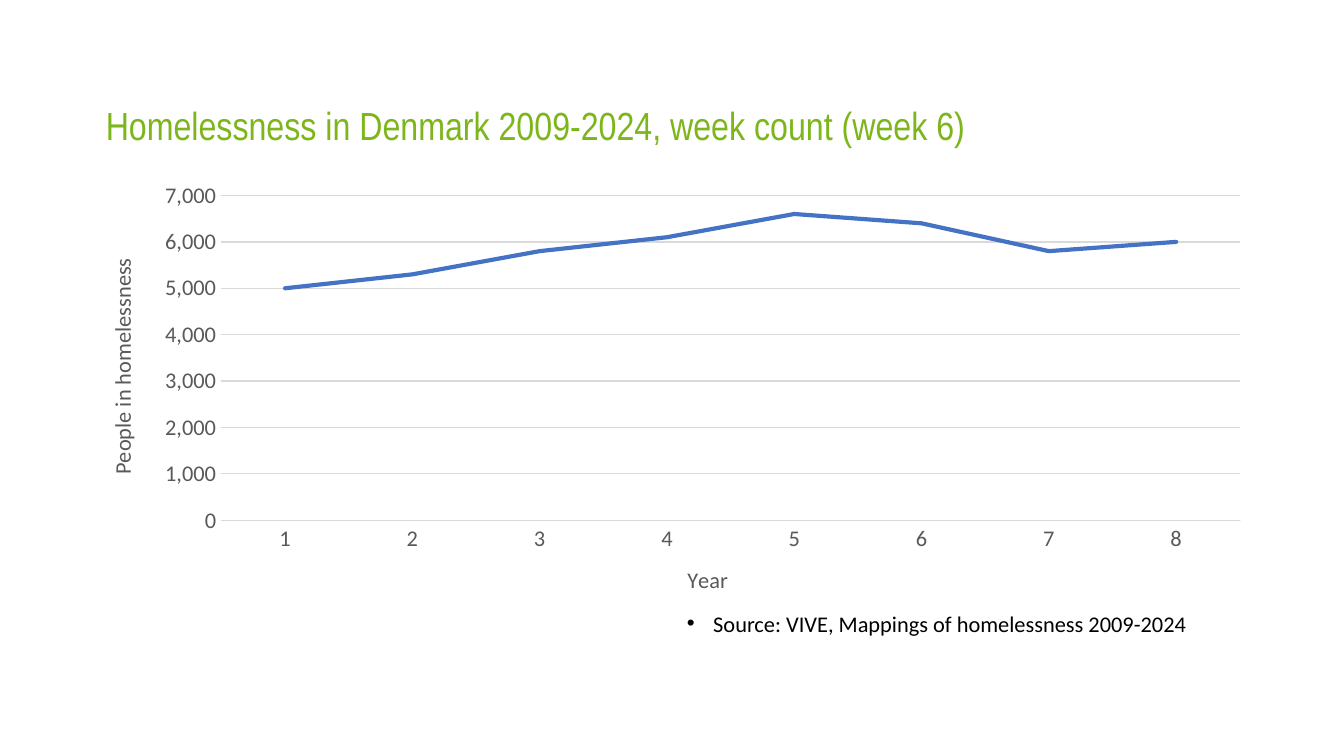
"""Build a slide with a line chart of homelessness in Denmark."""
from dataclasses import dataclass

from lxml import etree
from pptx import Presentation
from pptx.chart import data as cd
from pptx.dml.color import RGBColor
from pptx.enum import chart as ch
from pptx.oxml import ns
from pptx.util import Cm, Pt


@dataclass(frozen=True)
class Theme:
    """Hold the colours, fonts and type sizes of the slide."""
    green: str = "7DB61B"
    black: str = "000000"
    grey: str = "595959"
    grid: str = "D9D9D9"
    blue: str = "4472C4"
    heading: str = "Arial Narrow"
    body: str = "Calibri"
    title_size: float = 21
    body_size: float = 12


THEME = Theme()
COUNTS = (5000, 5300, 5800, 6100, 6600, 6400, 5800, 6000)


def style_font(font, size, color, name=THEME.body):
    """Set size, colour and typeface of a font."""
    font.size, font.name, font.bold = Pt(size), name, False
    font.color.rgb = RGBColor.from_string(color)


def style_line(line, color, width):
    """Set colour and width of a line with round ends."""
    line.color.rgb = RGBColor.from_string(color)
    line.width = Pt(width)
    line._get_or_add_ln().set("cap", "rnd")


def add_text(s, box, words, size, color, name=THEME.body):
    """Add a wrapped text box and return its paragraph."""
    tf = s.shapes.add_textbox(*map(Cm, box)).text_frame
    tf.word_wrap = True
    tf.text = words
    p = tf.paragraphs[0]
    style_font(p.runs[0].font, size, color, name)
    return p


def add_bullet(p, indent):
    """Give a paragraph a hanging round bullet."""
    pPr = p._p.get_or_add_pPr()
    pPr.set("marL", str(indent))
    pPr.set("indent", str(-indent))
    etree.SubElement(pPr, ns.qn("a:buFont"), typeface="Arial")
    etree.SubElement(pPr, ns.qn("a:buChar"), char="•")


def set_layout(parent, index, **values):
    """Place a chart part by fractions of the chart area."""
    for old in parent.findall(ns.qn("c:layout")):
        parent.remove(old)
    layout = etree.Element(ns.qn("c:layout"))
    parent.insert(index, layout)
    manual = etree.SubElement(layout, ns.qn("c:manualLayout"))
    for tag, value in values.items():
        etree.SubElement(manual, ns.qn(f"c:{tag}"), val=str(value))


def style_axis(axis, title, x, y, rotation=0):
    """Format the labels and the title of an axis."""
    axis.major_tick_mark = axis.minor_tick_mark = ch.XL_TICK_MARK.NONE
    style_font(axis.tick_labels.font, THEME.body_size, THEME.grey)
    tf = axis.axis_title.text_frame
    tf.text = title
    style_font(tf.paragraphs[0].runs[0].font, THEME.body_size, THEME.grey)
    tf._txBody.bodyPr.set("rot", str(rotation * 60000))
    set_layout(axis.axis_title._element, 1, xMode="edge", yMode="edge", x=x, y=y)


def add_line_chart(s, box):
    """Add the line chart of weekly counts."""
    data = cd.CategoryChartData(number_format="#,##0")
    data.categories = [str(i) for i in range(1, len(COUNTS) + 1)]
    data.add_series("Series 1", COUNTS)
    chart = s.shapes.add_chart(ch.XL_CHART_TYPE.LINE, *map(Cm, box), data).chart
    chart.has_legend = chart.has_title = False
    style_font(chart.font, THEME.body_size, THEME.black)

    years, people = chart.category_axis, chart.value_axis
    style_axis(years, "Year", 0.51, 0.86)
    style_line(years.format.line, THEME.grid, 0.75)
    style_axis(people, "People in homelessness", 0.02, 0.18, -90)
    people.minimum_scale, people.maximum_scale, people.major_unit = 0, 7000, 1000
    people.tick_labels.number_format = "#,##0"
    people.tick_labels.number_format_is_linked = False
    people.format.line.fill.background()
    style_line(people.major_gridlines.format.line, THEME.grid, 0.75)

    plot = chart.plots[0]
    plot.vary_by_categories = False
    series = plot.series[0]
    series.smooth = False
    series.marker.style = ch.XL_MARKER_STYLE.NONE
    style_line(series.format.line, THEME.blue, 2.25)
    set_layout(chart._chartSpace.chart.plotArea, 0, layoutTarget="inner",
               xMode="edge", yMode="edge", x=0.12, y=0.05, w=0.86, h=0.72)


def main():
    """Build and save the slide."""
    prs = Presentation()
    prs.slide_width, prs.slide_height = Cm(25.4), Cm(14.29)
    s = prs.slides.add_slide(prs.slide_layouts[6])
    p = add_text(s, (1.75, 1.9, 21.95, 1.27),
                 "Homelessness in Denmark 2009-2024, week count (week 6)",
                 THEME.title_size, THEME.green, THEME.heading)
    p.line_spacing = 0.9
    add_line_chart(s, (1.5, 3.27, 22.38, 8.53))
    p = add_text(s, (12.73, 11.4, 11.02, 0.36),
                 "Source: VIVE, Mappings of homelessness 2009-2024",
                 THEME.body_size, THEME.black)
    add_bullet(p, Cm(0.5))
    prs.save("out.pptx")


if __name__ == "__main__":
    main()
